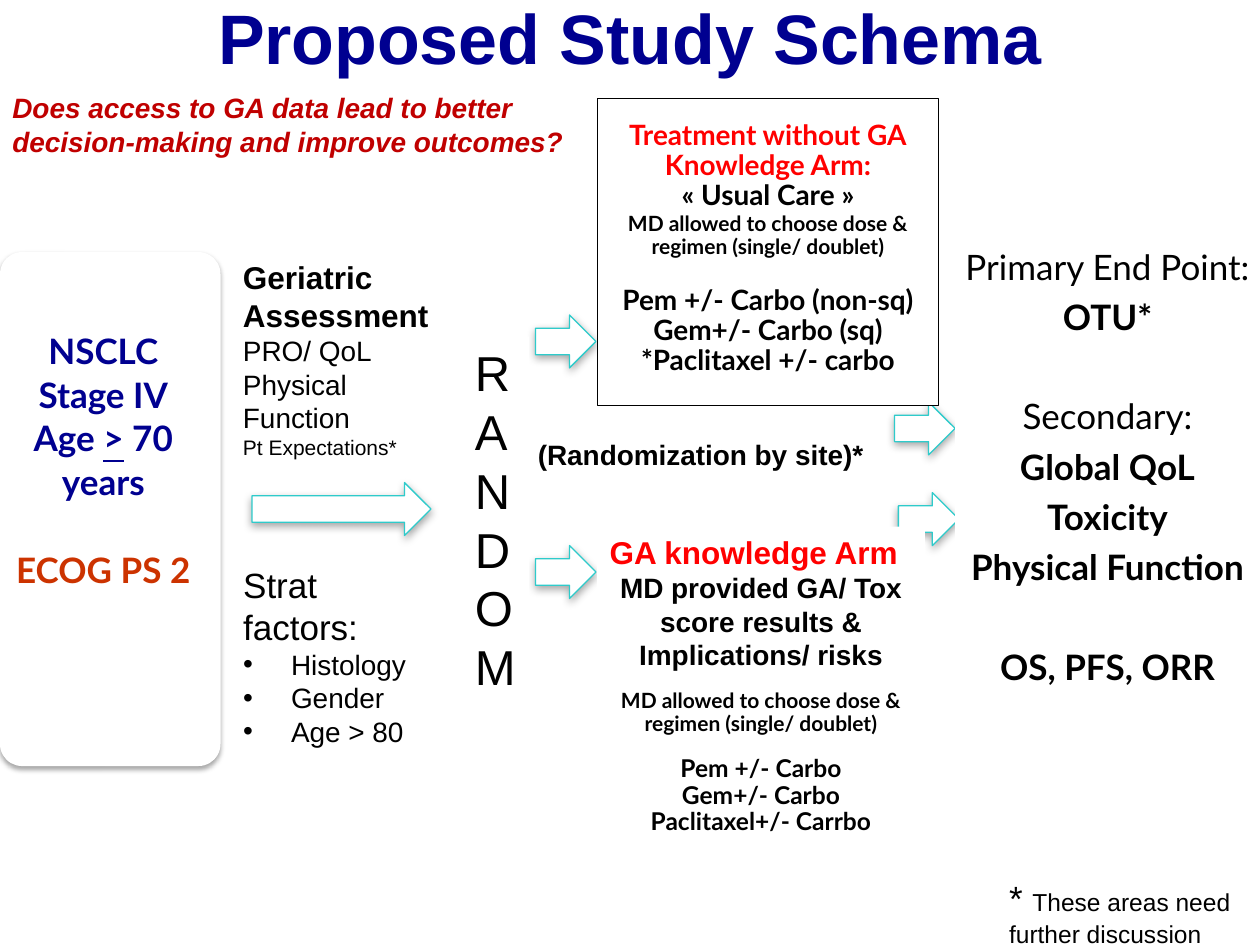
from lxml.etree import SubElement
from pptx import Presentation
from pptx.dml.color import RGBColor
from pptx.enum.shapes import MSO_SHAPE
from pptx.enum.text import MSO_ANCHOR, PP_ALIGN
from pptx.oxml.ns import qn
from pptx.util import Inches, Pt

WHITE = RGBColor(0xFF, 0xFF, 0xFF)
BLACK = RGBColor(0x00, 0x00, 0x00)
NAVY = RGBColor(0x00, 0x00, 0x90)
RED = RGBColor(0xFF, 0x00, 0x00)
DARK_RED = RGBColor(0xC0, 0x00, 0x00)
RUST = RGBColor(0xCC, 0x33, 0x00)
TEAL = RGBColor(0x2E, 0xCB, 0xCB)

SPACE_AFTER = 0.35  # share of the font size


def place(shape, box):
    shape.left, shape.top, shape.width, shape.height = map(Inches, box)


def set_margins(frame, margin, bottom=None):
    frame.margin_left = frame.margin_right = frame.margin_top = Inches(margin)
    frame.margin_bottom = Inches(margin if bottom is None else bottom)


def add_soft_shadow(shape, blur):
    effects = SubElement(shape._element.spPr, qn("a:effectLst"))
    shadow = SubElement(effects, qn("a:outerShdw"), blurRad=str(Pt(blur)),
                        dist=str(Pt(1.8)), dir="5400000", rotWithShape="0")
    color = SubElement(shadow, qn("a:srgbClr"), val="000000")
    SubElement(color, qn("a:alpha"), val="35000")


def add_run(paragraph, text, size, color=BLACK, font="Arial", bold=False,
            italic=False, underline=False):
    run = paragraph.add_run()
    run.text = text
    run.font.name, run.font.size = font, Pt(size)
    run.font.bold, run.font.italic, run.font.underline = bold, italic, underline
    run.font.color.rgb = color


def add_lines(frame, lines, align=PP_ALIGN.LEFT, spacing=None, **style):
    """Append (text, size, overrides) lines; a "gap" override is extra space after, in points."""
    for text, size, overrides in lines:
        first = frame.paragraphs[0]
        paragraph = frame.add_paragraph() if first.runs else first
        options = {**style, **overrides}
        gap = options.pop("gap", 0)
        paragraph.alignment = align
        paragraph.space_before = Pt(0)
        paragraph.line_spacing = spacing or 1.0
        paragraph.space_after = Pt((SPACE_AFTER * size if spacing else 0) + gap)
        pieces = [(text, {})] if isinstance(text, str) else text
        for piece, extra in pieces:
            add_run(paragraph, piece, size, **{**options, **extra})


def add_text_box(shapes, box, anchor=MSO_ANCHOR.TOP, wrap=True):
    shape = shapes.add_textbox(*map(Inches, box))
    shape.fill.solid()
    shape.fill.fore_color.rgb = WHITE
    frame = shape.text_frame
    frame.word_wrap = wrap
    frame.vertical_anchor = anchor
    return shape


def add_arrow(slide, box):
    arrow = slide.shapes.add_shape(MSO_SHAPE.RIGHT_ARROW, *map(Inches, box))
    arrow.fill.solid()
    arrow.fill.fore_color.rgb = WHITE
    arrow.line.color.rgb = TEAL
    arrow.line.width = Pt(0.75)
    add_soft_shadow(arrow, 5)


def add_title(slide, box):
    title = slide.shapes.title
    place(title, box)
    title.text_frame.vertical_anchor = MSO_ANCHOR.MIDDLE
    add_lines(title.text_frame, [("Proposed Study Schema", 40, {})],
              PP_ALIGN.CENTER, color=NAVY, bold=True)


def add_population(slide, box):
    left, top, width, height = box
    group = slide.shapes.add_group_shape()
    card = group.shapes.add_shape(MSO_SHAPE.ROUNDED_RECTANGLE, *map(Inches, box))
    card.adjustments[0] = 0.1
    card.fill.solid()
    card.fill.fore_color.rgb = WHITE
    card.line.fill.background()
    add_soft_shadow(card, 3.1)
    inner = (left + 0.05, top + 0.39, width - 0.21, height - 0.46)
    frame = add_text_box(group.shapes, inner, MSO_ANCHOR.MIDDLE).text_frame
    set_margins(frame, 0.02, bottom=1.05)
    age = [("Age ", {}), (">", {"underline": True}), (" 70", {})]
    add_lines(frame, [
        ("NSCLC", 20, {}), ("Stage IV", 20, {}), (age, 20, {}),
        ("years", 20, {"gap": 25}), ("ECOG PS 2", 20, {"color": RUST}),
    ], PP_ALIGN.CENTER, 0.75, font="Lato", color=NAVY, bold=True)


def add_usual_care_arm(slide, box):
    shape = add_text_box(slide.shapes, box, MSO_ANCHOR.MIDDLE)
    shape.line.color.rgb = BLACK
    shape.line.width = Pt(0.75)
    set_margins(shape.text_frame, 0.01)
    add_lines(shape.text_frame, [
        ("Treatment without GA", 16, {"color": RED}),
        ("Knowledge Arm:", 16, {"color": RED}),
        ("«\u00a0Usual Care\u00a0»", 16, {}),
        ("MD allowed to choose dose &", 12, {}),
        ("regimen (single/ doublet)", 12, {"gap": 17}),
        ("Pem +/- Carbo (non-sq)", 16, {}),
        ("Gem+/- Carbo (sq)", 16, {}),
        ("*Paclitaxel +/- carbo", 16, {}),
    ], PP_ALIGN.CENTER, 0.6, font="Lato", bold=True)


def add_ga_knowledge_arm(slide, box):
    frame = add_text_box(slide.shapes, box).text_frame
    add_lines(frame, [("GA knowledge Arm", 18, {})], color=RED, bold=True)
    add_lines(frame, [
        ("MD provided GA/ Tox score results &", 16, {}),
        ("Implications/ risks", 16, {"gap": 14.5}),
    ], PP_ALIGN.CENTER, bold=True)
    add_lines(frame, [
        ("MD allowed to choose dose &", 12, {}),
        ("regimen (single/ doublet)", 12, {"gap": 12.5}),
        ("Pem +/- Carbo", 14, {}),
        ("Gem+/- Carbo", 14, {}),
        ("Paclitaxel+/- Carrbo", 14, {}),
    ], PP_ALIGN.CENTER, 0.6, font="Lato", bold=True)


def add_end_points(slide, box):
    frame = add_text_box(slide.shapes, box, MSO_ANCHOR.MIDDLE).text_frame
    set_margins(frame, 0.02)
    add_lines(frame, [
        ("Primary End Point:", 20, {"bold": False}),
        ("OTU*", 20, {"gap": 28.5}),
        ("Secondary:", 20, {"bold": False}),
        ("Global QoL", 20, {}),
        ("Toxicity", 20, {}),
        ("Physical Function", 20, {"gap": 28.5}),
        ("OS, PFS, ORR", 20, {}),
    ], PP_ALIGN.CENTER, 0.9, font="Lato", bold=True)


def add_geriatric_assessment(slide, box):
    frame = add_text_box(slide.shapes, box).text_frame
    add_lines(frame, [
        ("Geriatric", 18, {"bold": True}), ("Assessment", 18, {"bold": True}),
        ("PRO/ QoL", 16, {}), ("Physical Function", 16, {}),
        ("Pt Expectations*", 12, {}),
    ])


def add_stratification_factors(slide, box):
    body = slide.placeholders[1]
    place(body, box)
    body.fill.solid()
    body.fill.fore_color.rgb = WHITE
    frame = body.text_frame
    factors = ("Histology", "Gender", "Age > 80")
    add_lines(frame, [("Strat factors:", 20, {})] + [(factor, 16, {}) for factor in factors])
    for index, paragraph in enumerate(frame.paragraphs):
        properties = paragraph._p.get_or_add_pPr()
        indent = Inches(0.38) if index else 0
        properties.set("marL", str(indent))
        properties.set("indent", str(-indent))
        if index:
            SubElement(properties, qn("a:buFont"), typeface="Arial")
            SubElement(properties, qn("a:buChar"), char="•")
        else:
            SubElement(properties, qn("a:buNone"))


def add_randomization(slide, letters_box, note_box):
    letters = add_text_box(slide.shapes, letters_box, wrap=False)
    add_lines(letters.text_frame, [(letter, 28, {}) for letter in "RANDOM"])
    note = add_text_box(slide.shapes, note_box)
    add_lines(note.text_frame, [("(Randomization by site)*", 16, {})], bold=True)


def add_question(slide, box):
    frame = add_text_box(slide.shapes, box).text_frame
    question = "Does access to GA data lead to better decision-making and improve outcomes?"
    add_lines(frame, [(question, 16, {})], color=DARK_RED, bold=True, italic=True)


def add_footnote(slide, box):
    paragraph = add_text_box(slide.shapes, box).text_frame.paragraphs[0]
    add_run(paragraph, "* ", 20)
    add_run(paragraph, "These areas need further discussion", 14)


def main():
    presentation = Presentation()
    presentation.slide_width, presentation.slide_height = Inches(10), Inches(7.5)
    slide = presentation.slides.add_slide(presentation.slide_layouts[1])
    add_title(slide, (0.5, -0.17, 9, 0.92))
    add_arrow(slide, (2, 3.83, 1.42, 0.42))
    for left, top in ((4.25, 2.5), (4.25, 4.33), (7.1, 3.19), (7.13, 3.91)):
        add_arrow(slide, (left, top, 0.48, 0.42))
    add_population(slide, (0, 2, 1.75, 4.08))
    add_usual_care_arm(slide, (4.74, 0.78, 2.71, 2.44))
    add_end_points(slide, (7.58, 1.47, 2.42, 4.5))
    add_geriatric_assessment(slide, (1.83, 2, 1.75, 1.72))
    add_randomization(slide, (3.67, 2.67, 0.53, 2.9), (4.17, 3.42, 2.8, 0.37))
    add_footnote(slide, (7.91, 6.91, 2.08, 0.67))
    add_question(slide, (0, 0.67, 4.67, 0.64))
    add_stratification_factors(slide, (1.83, 4.42, 1.67, 2.15))
    add_ga_knowledge_arm(slide, (4.74, 4.18, 2.6, 2.72))
    presentation.save("out.pptx")


if __name__ == "__main__":
    main()
